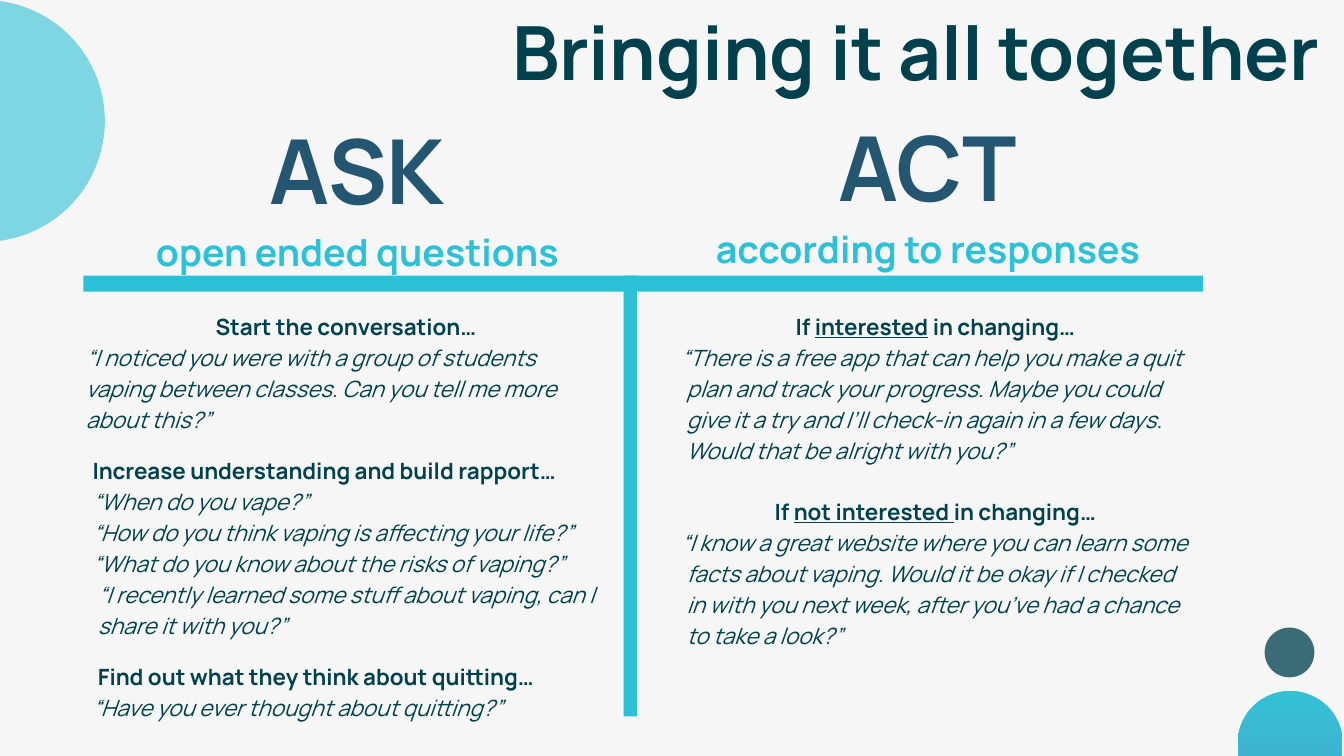
from lxml import etree
from pptx import Presentation
from pptx.dml.color import RGBColor
from pptx.enum.shapes import MSO_SHAPE as SHAPE
from pptx.enum.text import MSO_ANCHOR as ANCHOR, MSO_AUTO_SIZE as AUTO, PP_ALIGN as ALIGN
from pptx.oxml.ns import qn
from pptx.util import Inches, Pt

TEAL, CYAN, NAVY, PALE = "00414D", "2CC1D6", "245671", "F6F6F6"
HANGING, NARROW, FLUSH = (0.5, -0.35), (0.19, -0.04), (0.19, 0)


def rgb(color):
    return RGBColor.from_string(color)


class Deck:
    font = "Manrope"

    def __init__(self, width, height):
        self.prs = Presentation()
        self.prs.slide_width, self.prs.slide_height = Inches(width), Inches(height)

    def slide(self, color):
        self.s = self.prs.slides.add_slide(self.prs.slide_layouts[5])
        fill = self.s.background.fill
        fill.solid()
        fill.fore_color.rgb = rgb(color)

    def style(self, p, size, color, bold=True, italic=False, align=ALIGN.LEFT):
        p.alignment = align
        f = p.font
        f.name, f.size, f.bold, f.italic = self.font, Pt(size), bold, italic
        f.color.rgb = rgb(color)

    def title(self, text, x, y, w, h):
        sp = self.s.shapes.title
        sp.left, sp.top, sp.width, sp.height = map(Inches, (x, y, w, h))
        tf = self.frame(sp, ANCHOR.TOP)
        tf.text = text
        self.style(tf.paragraphs[0], 40, TEAL, align=ALIGN.CENTER)

    def frame(self, sp, anchor):
        tf = sp.text_frame
        tf.word_wrap, tf.auto_size, tf.vertical_anchor = True, AUTO.NONE, anchor
        tf.margin_left = tf.margin_right = tf.margin_top = tf.margin_bottom = Inches(0.1)
        return tf

    def box(self, x, y, w, h, anchor=ANCHOR.TOP):
        return self.frame(self.s.shapes.add_textbox(*map(Inches, (x, y, w, h))), anchor)

    def heading(self, word, subtitle, x, y, w):
        tf = self.box(x, y, w, 0.94, ANCHOR.BOTTOM)
        for i, (text, size, color) in enumerate([(word, 48, NAVY), (subtitle, 20, CYAN)]):
            p = tf.add_paragraph() if i else tf.paragraphs[0]
            p.text, p.line_spacing = text, 1.15
            self.style(p, size, color, align=ALIGN.CENTER)

    def script(self, lines, x, w):
        tf = self.box(x, 2.2, w, 2.05)
        for i, (text, (margin, indent), align, gap) in enumerate(lines):
            p = tf.add_paragraph() if i else tf.paragraphs[0]
            quote = text.startswith("“")
            self.style(p, 12, TEAL, not quote, quote, align)
            p.line_spacing, p.space_before = 1.15, Pt(gap)
            pPr = p._p.get_or_add_pPr()
            pPr.set("marL", str(Inches(margin)))
            pPr.set("indent", str(Inches(indent)))
            for k, part in enumerate(text.split("_")):
                r = p.add_run()
                r.text = part
                if k % 2:
                    r.font.underline = True

    def shape(self, kind, x, y, w, h, color, alpha=100):
        sp = self.s.shapes.add_shape(kind, *map(Inches, (x, y, w, h)))
        sp.shadow.inherit = False
        sp.line.fill.background()
        sp.fill.solid()
        sp.fill.fore_color.rgb = rgb(color)
        if alpha < 100:
            clr = sp._element.spPr.find(qn("a:solidFill"))[0]
            etree.SubElement(clr, qn("a:alpha")).set("val", str(alpha * 1000))
        return sp

    def gradient(self, sp, stops):
        sp.fill.gradient()
        sp.fill.gradient_angle = 270
        for stop, (position, color) in zip(sp.fill.gradient_stops, stops):
            stop.position, stop.color.rgb = position, rgb(color)


ASK_LINES = [
    ("Start the conversation…", HANGING, ALIGN.CENTER, 0),
    ("“I noticed you were with a group of students vaping between classes. "
     "Can you tell me more about this?”", (0.1, 0), ALIGN.LEFT, 0),
    ("Increase understanding and build rapport…", HANGING, ALIGN.LEFT, 11),
    ("“When do you vape?”", HANGING, ALIGN.LEFT, 0),
    ("“How do you think vaping is affecting your life?”", HANGING, ALIGN.LEFT, 0),
    ("“What do you know about the risks of vaping?”", NARROW, ALIGN.LEFT, 0),
    ("“I recently learned some stuff about vaping, can I share it with you?”",
     FLUSH, ALIGN.LEFT, 0),
    ("Find out what they think about quitting…", FLUSH, ALIGN.LEFT, 11),
    ("“Have you ever thought about quitting?”", HANGING, ALIGN.LEFT, 0),
]
ACT_LINES = [
    ("If _interested_ in changing…", HANGING, ALIGN.CENTER, 0),
    ("“There is a free app that can help you make a quit plan and track your progress. "
     "Maybe you could give it a try and I’ll check-in again in a few days. "
     "Would that be alright with you?”", NARROW, ALIGN.LEFT, 0),
    ("If _not interested _in changing…", HANGING, ALIGN.CENTER, 16.5),
    ("“I know a great website where you can learn some facts about vaping. "
     "Would it be okay if I checked in with you next week, "
     "after you’ve had a chance to take a look?”", NARROW, ALIGN.LEFT, 0),
]


def main():
    deck = Deck(10, 5.625)
    deck.slide(PALE)
    deck.title("Bringing it all together", 2.6, -0.06, 8.43, 0.63)
    deck.shape(SHAPE.OVAL, -1.02, 0, 1.8, 1.8, "2DC1D6", 60)
    deck.shape(SHAPE.OVAL, 9.41, 4.67, 0.37, 0.37, TEAL, 76)
    body = deck.shape(SHAPE.ROUNDED_RECTANGLE, 9.21, 5.14, 0.78, 2.29, CYAN)
    body.adjustments[0] = 0.5
    deck.gradient(body, [(0, "34C1D6"), (0.8, "5D87BC")])
    deck.script(ASK_LINES, 0.44, 4.12)
    deck.script(ACT_LINES, 4.82, 4.13)
    deck.heading("ASK", "open ended questions", 1.03, 1.2, 3.26)
    deck.heading("ACT", "according to responses", 5.21, 1.18, 3.39)
    deck.shape(SHAPE.RECTANGLE, 4.64, 2.05, 0.1, 3.28, CYAN)
    deck.shape(SHAPE.RECTANGLE, 0.62, 2.05, 8.33, 0.12, CYAN)
    deck.prs.save("out.pptx")


if __name__ == "__main__":
    main()
